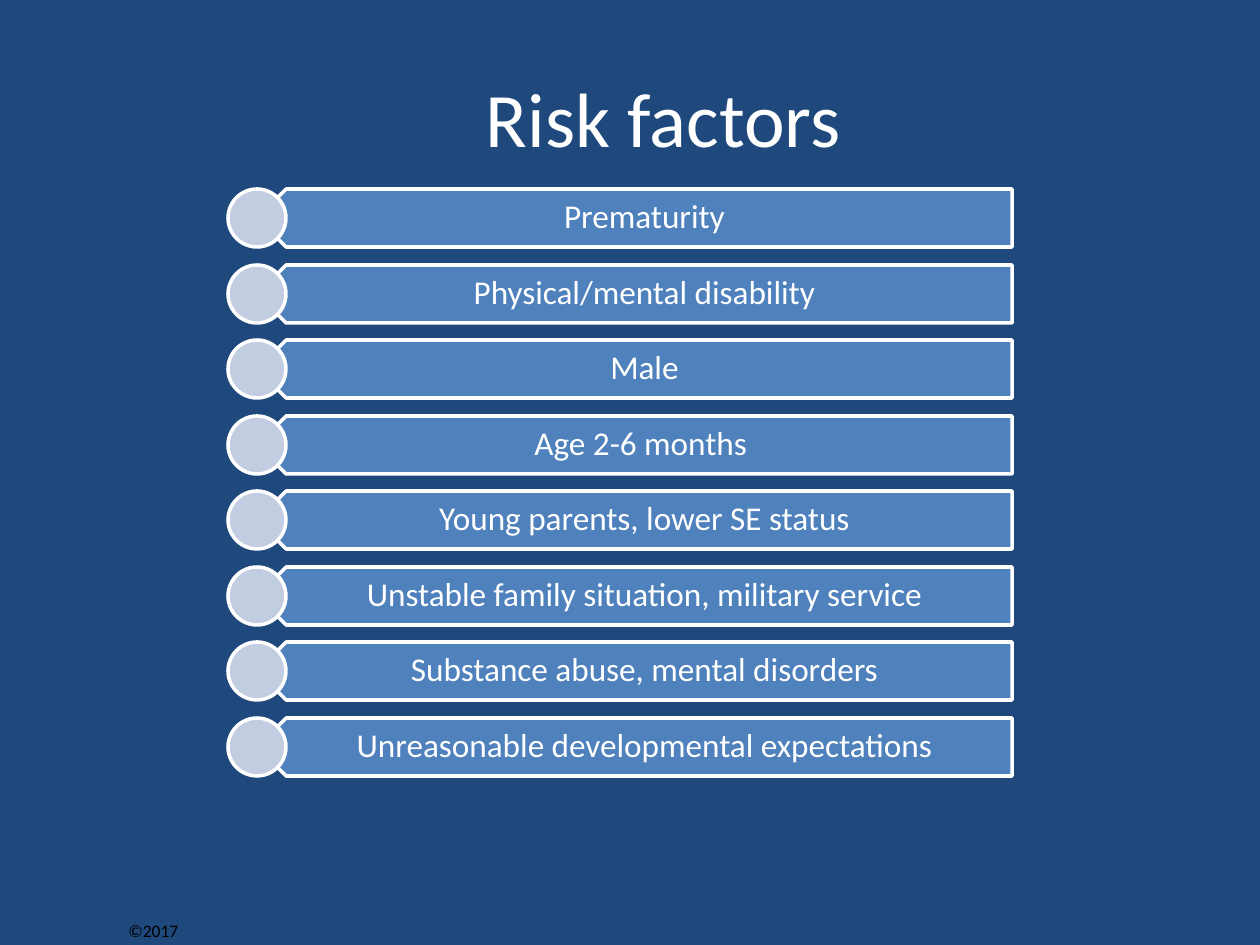
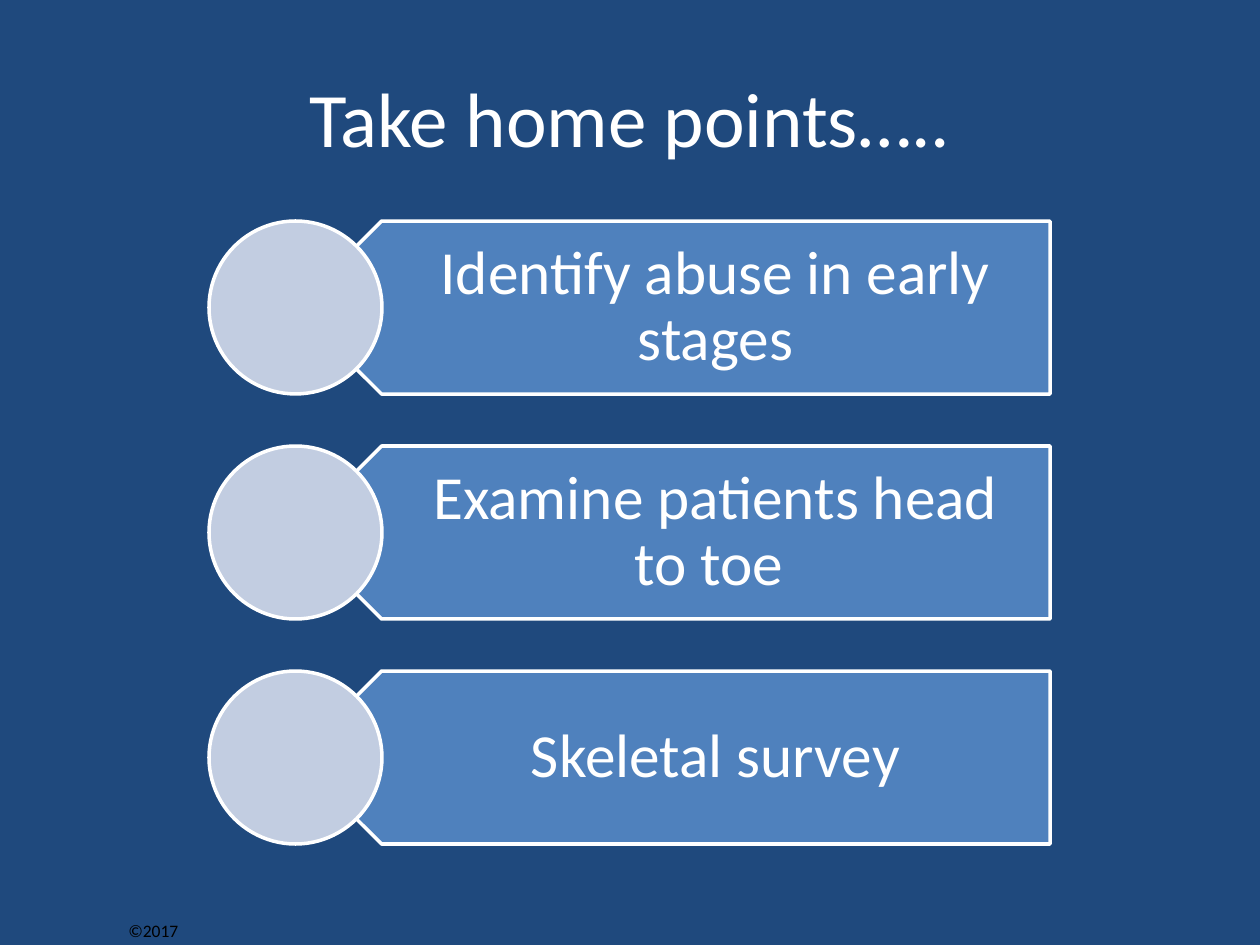
from dataclasses import dataclass

from pptx import Presentation
from pptx.dml.color import RGBColor
from pptx.enum.shapes import MSO_SHAPE
from pptx.enum.text import MSO_ANCHOR, MSO_AUTO_SIZE, PP_ALIGN
from pptx.util import Emu, Pt

EMU_PER_PX = 914400 / 126
PENTAGON, CIRCLE = MSO_SHAPE.PENTAGON, MSO_SHAPE.OVAL
TOP, MIDDLE = MSO_ANCHOR.TOP, MSO_ANCHOR.MIDDLE
LEFT, CENTER = PP_ALIGN.LEFT, PP_ALIGN.CENTER
NO_AUTOFIT = MSO_AUTO_SIZE.NONE


@dataclass(frozen=True)
class Theme:
    font: str = "Calibri"
    background: str = "1F497D"
    banner: str = "4F81BD"
    marker: str = "C2CDE1"
    light: str = "FFFFFF"
    dark: str = "000000"
    title_size: int = 44
    footer_size: int = 10
    outline: int = 2


@dataclass(frozen=True)
class ListStyle:
    """Geometry of a banner list in px; insets run left, top, right, bottom."""
    left: int
    first_top: int
    last_top: int
    height: int
    insets: tuple
    text_size: int


THEME = Theme()
BANNER_WIDTH = 755
COMPACT = ListStyle(228, 189, 718, 58, (25, 10, 19, 10), 19)
LARGE = ListStyle(209, 221, 671, 173, (77, 19, 34, 19), 35)

RISK_FACTORS = [
    "Prematurity",
    "Physical/mental disability",
    "Male",
    "Age 2-6 months ",
    "Young parents, lower SE status",
    "Unstable family situation, military service",
    "Substance abuse, mental disorders",
    "Unreasonable developmental expectations",
]
TAKE_HOME_POINTS = [
    "Identify abuse in early stages",
    "Examine patients head to toe ",
    "Skeletal survey",
]


def px(length):
    return Emu(round(length * EMU_PER_PX))


def box(left, top, width, height):
    return [px(length) for length in (left, top, width, height)]


def color(code):
    return RGBColor.from_string(code)


def write(frame, text, *, size, ink=THEME.light, align=CENTER, anchor=MIDDLE,
          insets=None, spacing=None, indent=0, wrap=True):
    frame.word_wrap = wrap
    frame.auto_size = NO_AUTOFIT
    frame.vertical_anchor = anchor
    if insets:
        (frame.margin_left, frame.margin_top,
         frame.margin_right, frame.margin_bottom) = map(px, insets)
    paragraph = frame.paragraphs[0]
    paragraph.alignment = align
    if spacing:
        paragraph.line_spacing = spacing
    if indent:
        properties = paragraph._p.get_or_add_pPr()
        properties.set("marL", str(px(indent)))
        properties.set("indent", "0")
    run = paragraph.add_run()
    run.text = text
    run.font.name = THEME.font
    run.font.size = Pt(size)
    run.font.color.rgb = color(ink)


def add_outlined(slide, preset, bounds, fill):
    shape = slide.shapes.add_shape(preset, *box(*bounds))
    shape.shadow.inherit = False
    shape.fill.solid()
    shape.fill.fore_color.rgb = color(fill)
    shape.line.color.rgb = color(THEME.light)
    shape.line.width = Pt(THEME.outline)
    return shape


def add_banner(slide, text, top, style):
    """Left-pointing banner with its label and a circle over the tip."""
    height = style.height
    banner_left = style.left + height // 2
    label_offset = height // 4
    banner = add_outlined(slide, PENTAGON,
                          (banner_left, top, BANNER_WIDTH, height), THEME.banner)
    banner.rotation = 180
    label = slide.shapes.add_textbox(*box(
        banner_left + label_offset, top, BANNER_WIDTH - label_offset, height))
    write(label.text_frame, text, size=style.text_size,
          insets=style.insets, spacing=0.9)
    add_outlined(slide, CIRCLE, (style.left, top, height, height), THEME.marker)


def add_banner_list(slide, items, style):
    pitch = (style.last_top - style.first_top) / (len(items) - 1)
    for row, text in enumerate(items):
        add_banner(slide, text, round(style.first_top + row * pitch), style)


def add_footer(slide):
    footer = slide.shapes.add_textbox(*box(116, 914, 77, 34))
    write(footer.text_frame, "©2017", size=THEME.footer_size, ink=THEME.dark,
          align=LEFT, anchor=TOP, wrap=False)


def add_list_slide(prs, heading, items, style, indent=0):
    slide = prs.slides.add_slide(prs.slide_layouts[5])
    slide.background.fill.solid()
    slide.background.fill.fore_color.rgb = color(THEME.background)
    add_footer(slide)
    title = slide.shapes.title
    title.left, title.top, title.width, title.height = box(63, 38, 1134, 157)
    write(title.text_frame, heading, size=THEME.title_size, indent=indent)
    add_banner_list(slide, items, style)


def main():
    prs = Presentation()
    prs.slide_width, prs.slide_height = px(1260), px(945)
    add_list_slide(prs, "Risk factors", RISK_FACTORS, COMPACT, indent=67)
    add_list_slide(prs, "Take home points…..", TAKE_HOME_POINTS, LARGE)
    prs.save("out.pptx")


if __name__ == "__main__":
    main()
